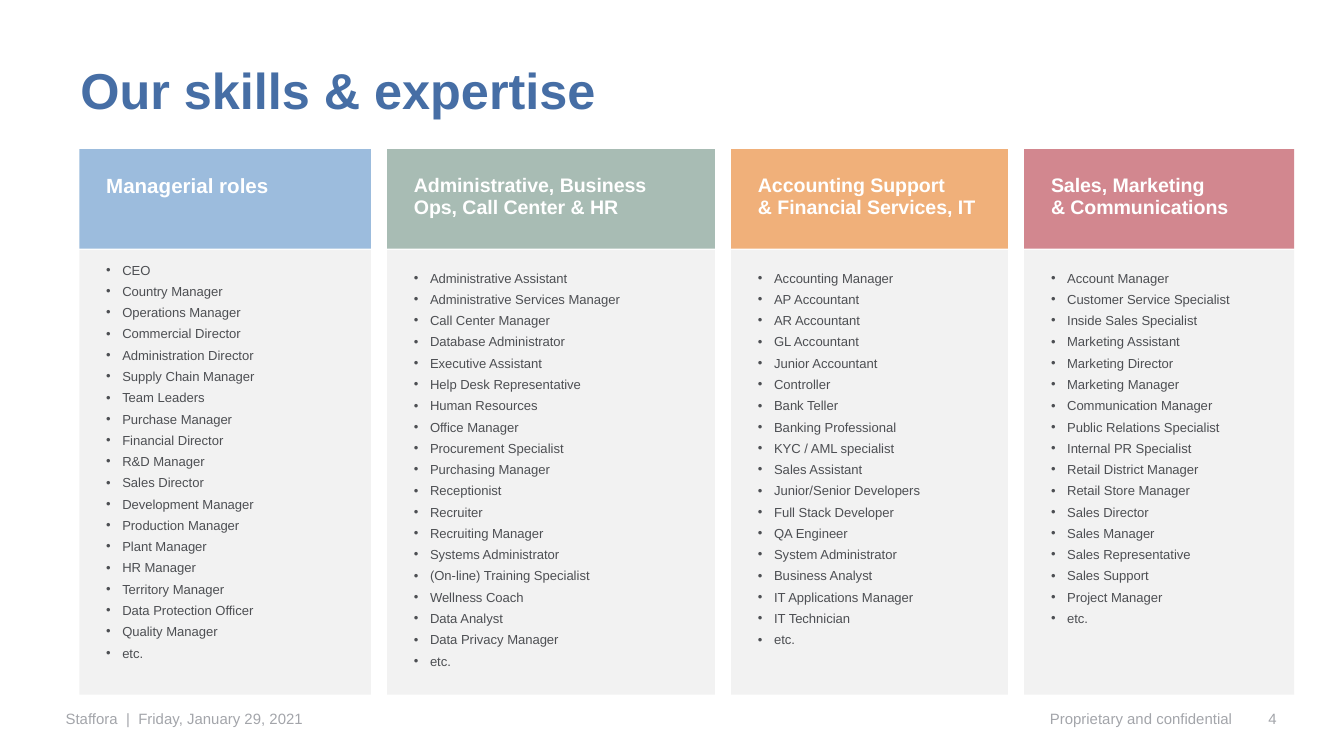
from pptx import Presentation
from pptx.dml.color import RGBColor
from pptx.enum import shapes, text
from pptx.oxml.ns import qn
from pptx.util import Inches, Pt

FONT = "Arial"
BLUE = RGBColor(0x46, 0x6E, 0xA5)
WHITE = RGBColor(0xFF, 0xFF, 0xFF)
DARK_GREY = RGBColor(0x4D, 0x4F, 0x53)
FOOTER_GREY = RGBColor(0xA3, 0xA5, 0xAA)
PANEL_GREY = RGBColor(0xF2, 0xF2, 0xF2)
SKY = RGBColor(0x9C, 0xBC, 0xDD)
SAGE = RGBColor(0xA8, 0xBC, 0xB4)
ORANGE = RGBColor(0xF0, 0xB0, 0x7A)
ROSE = RGBColor(0xD2, 0x87, 0x8F)

LEFT, GAP = 0.59, 0.12
HEADER_TOP, HEADER_HEIGHT = 1.11, 0.74
LIST_TOP, LIST_HEIGHT = 1.86, 3.31

# width, colour, heading lines, heading size, list top inset, roles
COLUMNS = [
    (2.17, SKY, ["Managerial roles"], 11, 0.09, [
        "CEO", "Country Manager", "Operations Manager",
        "Commercial Director", "Administration Director",
        "Supply Chain Manager", "Team Leaders", "Purchase Manager",
        "Financial Director", "R&D Manager", "Sales Director",
        "Development Manager", "Production Manager", "Plant Manager",
        "HR Manager", "Territory Manager", "Data Protection Officer",
        "Quality Manager", "etc."]),
    (2.44, SAGE, ["Administrative, Business Ops, Call Center & HR"], 10.5, 0.15, [
        "Administrative Assistant", "Administrative Services Manager",
        "Call Center Manager", "Database Administrator",
        "Executive Assistant", "Help Desk Representative",
        "Human Resources", "Office Manager", "Procurement Specialist",
        "Purchasing Manager", "Receptionist", "Recruiter",
        "Recruiting Manager", "Systems Administrator",
        "(On-line) Training Specialist", "Wellness Coach",
        "Data Analyst", "Data Privacy Manager", "etc."]),
    (2.06, ORANGE, ["Accounting Support ", "& Financial Services, IT"], 10.5, 0.15, [
        "Accounting Manager", "AP Accountant", "AR Accountant",
        "GL Accountant", "Junior Accountant", "Controller",
        "Bank Teller", "Banking Professional", "KYC / AML specialist",
        "Sales Assistant", "Junior/Senior Developers",
        "Full Stack Developer", "QA Engineer", "System Administrator",
        "Business Analyst", "IT Applications Manager",
        "IT Technician", "etc."]),
    (2.01, ROSE, ["Sales, Marketing ", "& Communications"], 10.5, 0.15, [
        "Account Manager", "Customer Service Specialist",
        "Inside Sales Specialist", "Marketing Assistant",
        "Marketing Director", "Marketing Manager",
        "Communication Manager", "Public Relations Specialist",
        "Internal PR Specialist", "Retail District Manager",
        "Retail Store Manager", "Sales Director", "Sales Manager",
        "Sales Representative", "Sales Support", "Project Manager",
        "etc."]),
]


def add_span(para, words, size, color, bold=False):
    span = para.add_run()
    span.text = words
    span.font.name = FONT
    span.font.size = Pt(size)
    span.font.color.rgb = color
    span.font.bold = bold


def set_frame(frame, left, top, right, bottom, anchor):
    """Set the insets in inches and the vertical anchor of a wrapping frame."""
    frame.word_wrap = True
    frame.margin_left, frame.margin_top = Inches(left), Inches(top)
    frame.margin_right, frame.margin_bottom = Inches(right), Inches(bottom)
    frame.vertical_anchor = anchor


def add_label(page, place, words, size, color, bold=False, inset=(0, 0),
              anchor=text.MSO_ANCHOR.TOP, align=text.PP_ALIGN.LEFT):
    box = page.shapes.add_textbox(*map(Inches, place))
    set_frame(box.text_frame, *inset, *inset, anchor)
    para = box.text_frame.paragraphs[0]
    para.alignment = align
    add_span(para, words, size, color, bold)


def add_panel(page, left, top, width, height, color, top_inset):
    """Draw a plain filled rectangle and return its text frame."""
    panel = page.shapes.add_shape(shapes.MSO_SHAPE.RECTANGLE, Inches(left),
                                  Inches(top), Inches(width), Inches(height))
    panel.shadow.inherit = False
    panel.fill.solid()
    panel.fill.fore_color.rgb = color
    panel.line.fill.background()
    set_frame(panel.text_frame, 0.2, top_inset, 0.2, 0.2, text.MSO_ANCHOR.TOP)
    return panel.text_frame


def add_heading(frame, lines, size):
    para = frame.paragraphs[0]
    para.alignment = text.PP_ALIGN.LEFT
    para.line_spacing = 0.9
    for index, line in enumerate(lines):
        if index:
            para.add_line_break()
        add_span(para, line, size, WHITE, bold=True)


def add_bullet(para):
    properties = para._p.get_or_add_pPr()
    properties.set("marL", str(Inches(0.12)))
    properties.set("indent", str(Inches(-0.12)))
    font = properties.makeelement(qn("a:buFont"), {"typeface": FONT})
    mark = properties.makeelement(qn("a:buChar"), {"char": "•"})
    properties.extend([font, mark])


def add_roles(frame, roles):
    for index, role in enumerate(roles):
        para = frame.add_paragraph() if index else frame.paragraphs[0]
        add_bullet(para)
        para.alignment = text.PP_ALIGN.LEFT
        para.space_after = Pt(3)
        add_span(para, role, 7, DARK_GREY)


def add_columns(page):
    left = LEFT
    for width, color, heading, size, list_inset, roles in COLUMNS:
        header = add_panel(page, left, HEADER_TOP, width, HEADER_HEIGHT, color, 0.2)
        add_heading(header, heading, size)
        body = add_panel(page, left, LIST_TOP, width, LIST_HEIGHT, PANEL_GREY, list_inset)
        add_roles(body, roles)
        left += width + GAP


def add_footer(page):
    add_label(page, (9.17, 5.22, 0.33, 0.25), "4", 8, FOOTER_GREY,
              anchor=text.MSO_ANCHOR.MIDDLE, align=text.PP_ALIGN.RIGHT)
    add_label(page, (0.39, 5.23, 2.64, 0.24), "Staffora  |  Friday, January 29, 2021",
              8, FOOTER_GREY, inset=(0.1, 0.05))
    add_label(page, (7.75, 5.28, 1.42, 0.13), "Proprietary and confidential",
              8, FOOTER_GREY, align=text.PP_ALIGN.RIGHT)


def main():
    deck = Presentation()
    deck.slide_width = Inches(10)
    deck.slide_height = deck.slide_width * 9 // 16
    page = deck.slides.add_slide(deck.slide_layouts[6])
    add_footer(page)
    add_label(page, (0.5, 0.38, 9, 0.62), "Our skills & expertise", 27, BLUE,
              bold=True, inset=(0.1, 0.06))
    add_columns(page)
    deck.save("out.pptx")


if __name__ == "__main__":
    main()
